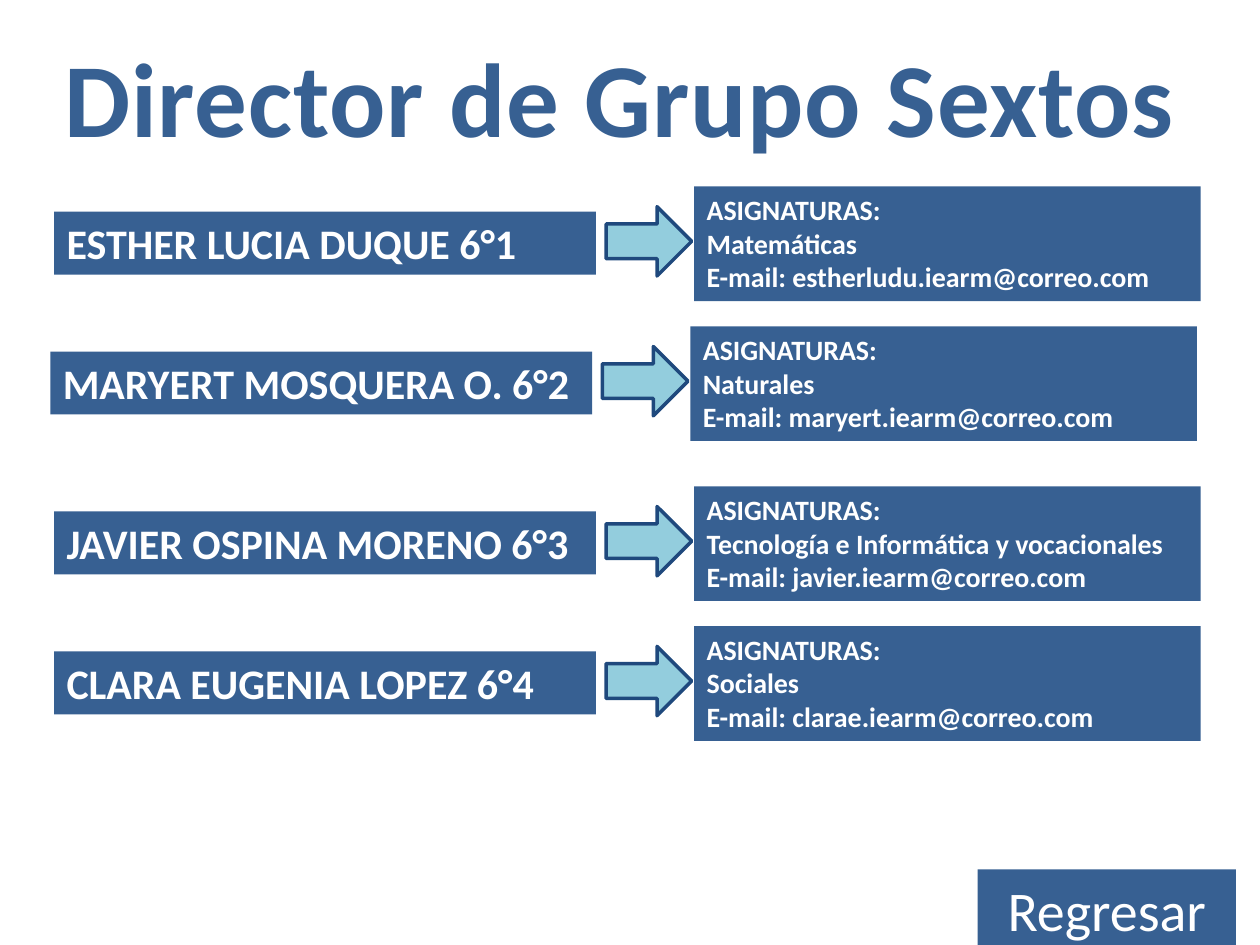
from dataclasses import dataclass

from pptx import Presentation
from pptx.dml.color import RGBColor
from pptx.enum.shapes import MSO_SHAPE
from pptx.enum.text import MSO_ANCHOR, MSO_AUTO_SIZE, PP_ALIGN
from pptx.shapes.autoshape import Shape
from pptx.slide import Slide
from pptx.util import Inches, Pt

BLUE = "376092"
NAVY = "1F497D"
AQUA = "93CDDD"
WHITE = "FFFFFF"


@dataclass(frozen=True)
class Director:
    name: str
    group: str
    subject: str
    email: str
    left: float
    top: float


DIRECTORS = [
    Director("ESTHER LUCIA DUQUE", "6°1", "Matemáticas", "estherludu.iearm@correo.com", 0.43, 1.48),
    Director("MARYERT MOSQUERA O.", "6°2", "Naturales", "maryert.iearm@correo.com", 0.4, 2.59),
    Director("JAVIER OSPINA MORENO", "6°3", "Tecnología e Informática y vocacionales",
             "javier.iearm@correo.com", 0.43, 3.86),
    Director("CLARA EUGENIA LOPEZ", "6°4", "Sociales", "clarae.iearm@correo.com", 0.43, 4.97),
]


def rgb(hex_color: str) -> RGBColor:
    return RGBColor.from_string(hex_color)


def write(shape: Shape, text: str, size: float, color: str, bold: bool, align: PP_ALIGN) -> None:
    frame = shape.text_frame
    frame.text = text
    frame.auto_size = MSO_AUTO_SIZE.SHAPE_TO_FIT_TEXT
    frame.vertical_anchor = MSO_ANCHOR.TOP
    for paragraph in frame.paragraphs:
        paragraph.alignment = align
        for run in paragraph.runs:
            run.font.name = "Calibri"
            run.font.size = Pt(size)
            run.font.bold = bold
            run.font.color.rgb = rgb(color)


def add_title(slide: Slide, text: str) -> None:
    title = slide.shapes.add_textbox(Inches(0.36), Inches(0.21), Inches(9.12), Inches(1.11))
    write(title, text, 60, BLUE, True, PP_ALIGN.CENTER)
    title.text_frame.word_wrap = False
    for run in title.text_frame.paragraphs[0].runs:
        run.font._element.set("spc", "50")


def add_label(slide: Slide, left: float, top: float, width: float, height: float, text: str,
              size: float, bold: bool = True, align: PP_ALIGN = PP_ALIGN.LEFT) -> None:
    label = slide.shapes.add_shape(
        MSO_SHAPE.RECTANGLE, Inches(left), Inches(top), Inches(width), Inches(height))
    label.shadow.inherit = False
    label.fill.solid()
    label.fill.fore_color.rgb = rgb(BLUE)
    label.line.fill.background()
    write(label, text, size, WHITE, bold, align)
    label.text_frame.word_wrap = True


def add_arrow(slide: Slide, left: float, top: float) -> None:
    arrow = slide.shapes.add_shape(
        MSO_SHAPE.RIGHT_ARROW, Inches(left), Inches(top), Inches(0.68), Inches(0.55))
    arrow.shadow.inherit = False
    arrow.fill.solid()
    arrow.fill.fore_color.rgb = rgb(AQUA)
    arrow.line.color.rgb = rgb(NAVY)
    arrow.line.width = Pt(2)


def add_director(slide: Slide, director: Director) -> None:
    left, top = director.left, director.top
    details = f"ASIGNATURAS:\n{director.subject}\nE-mail: {director.email}"
    add_label(slide, left, top + 0.2, 4.3, 0.5, f"{director.name} {director.group}", 24)
    add_label(slide, left + 5.08, top, 4.02, 0.91, details, 16)
    add_arrow(slide, left + 4.38, top + 0.16)


def main() -> None:
    """Build the slide listing the group directors of the sixth grades."""
    presentation = Presentation()
    presentation.slide_width = Inches(10)
    presentation.slide_height = Inches(7.5)
    slide = presentation.slides.add_slide(presentation.slide_layouts[6])
    add_title(slide, "Director de Grupo Sextos")
    for director in DIRECTORS:
        add_director(slide, director)
    add_label(slide, 7.76, 6.9, 2.05, 0.64, "Regresar", 32, False, PP_ALIGN.CENTER)
    presentation.save("out.pptx")


if __name__ == "__main__":
    main()
